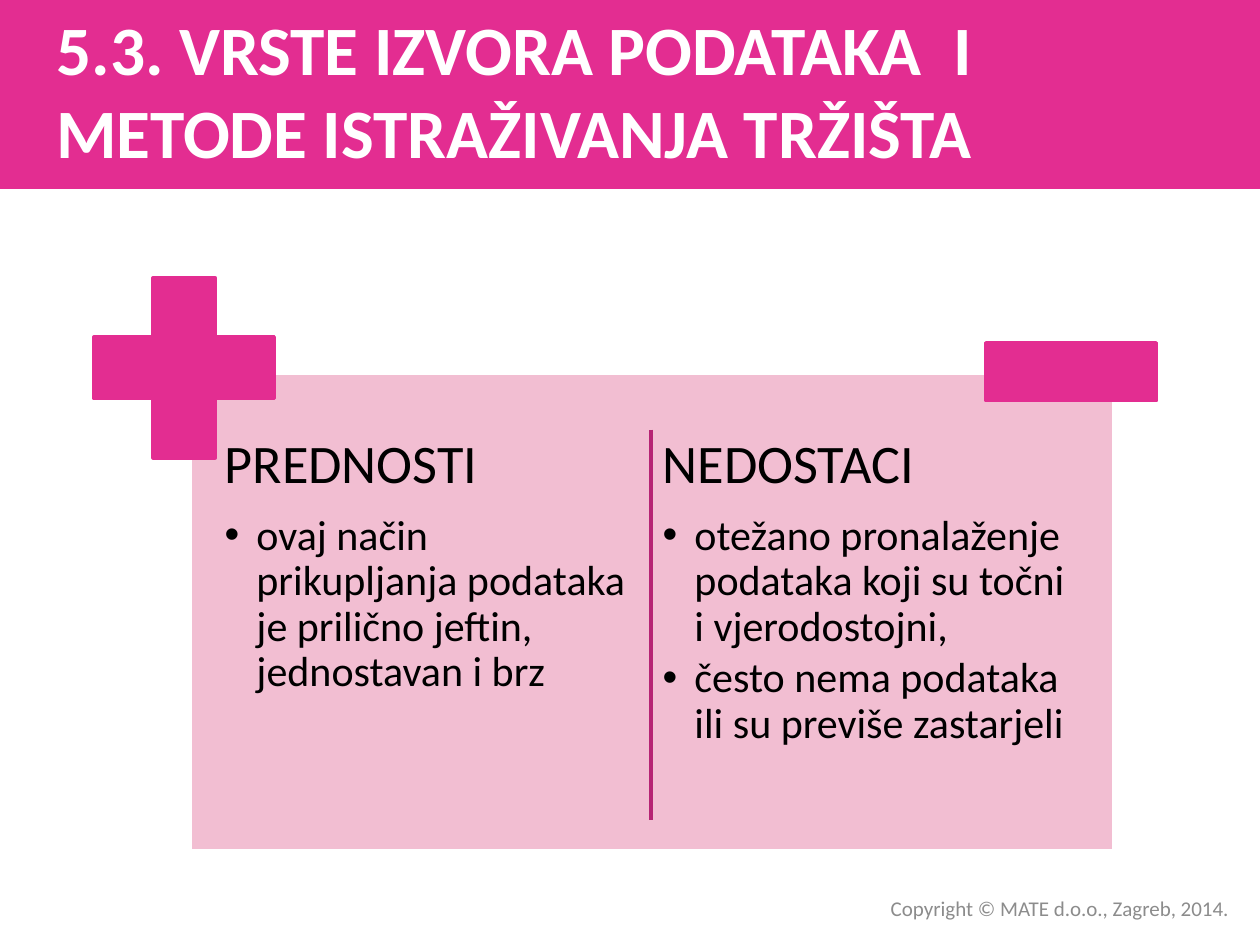
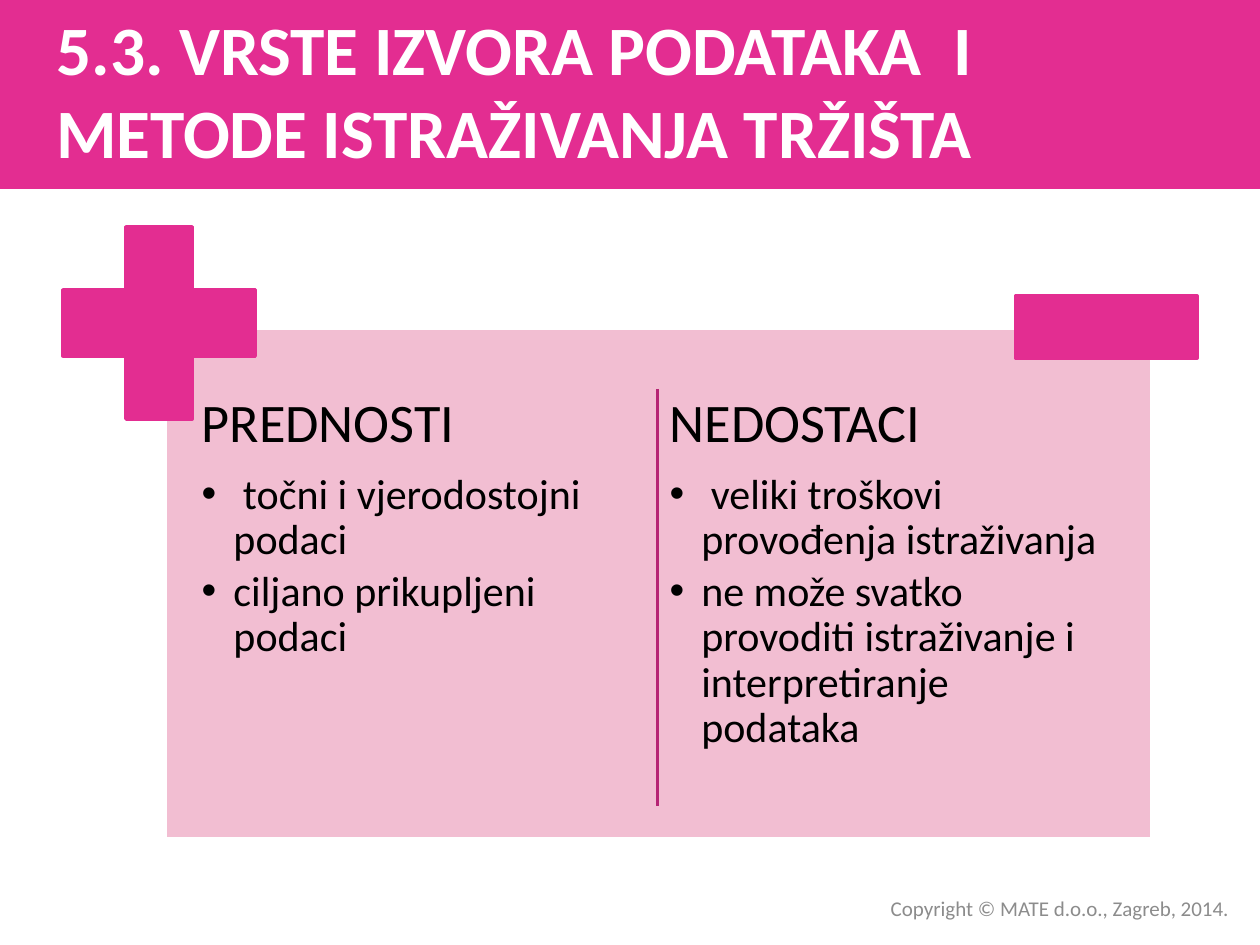
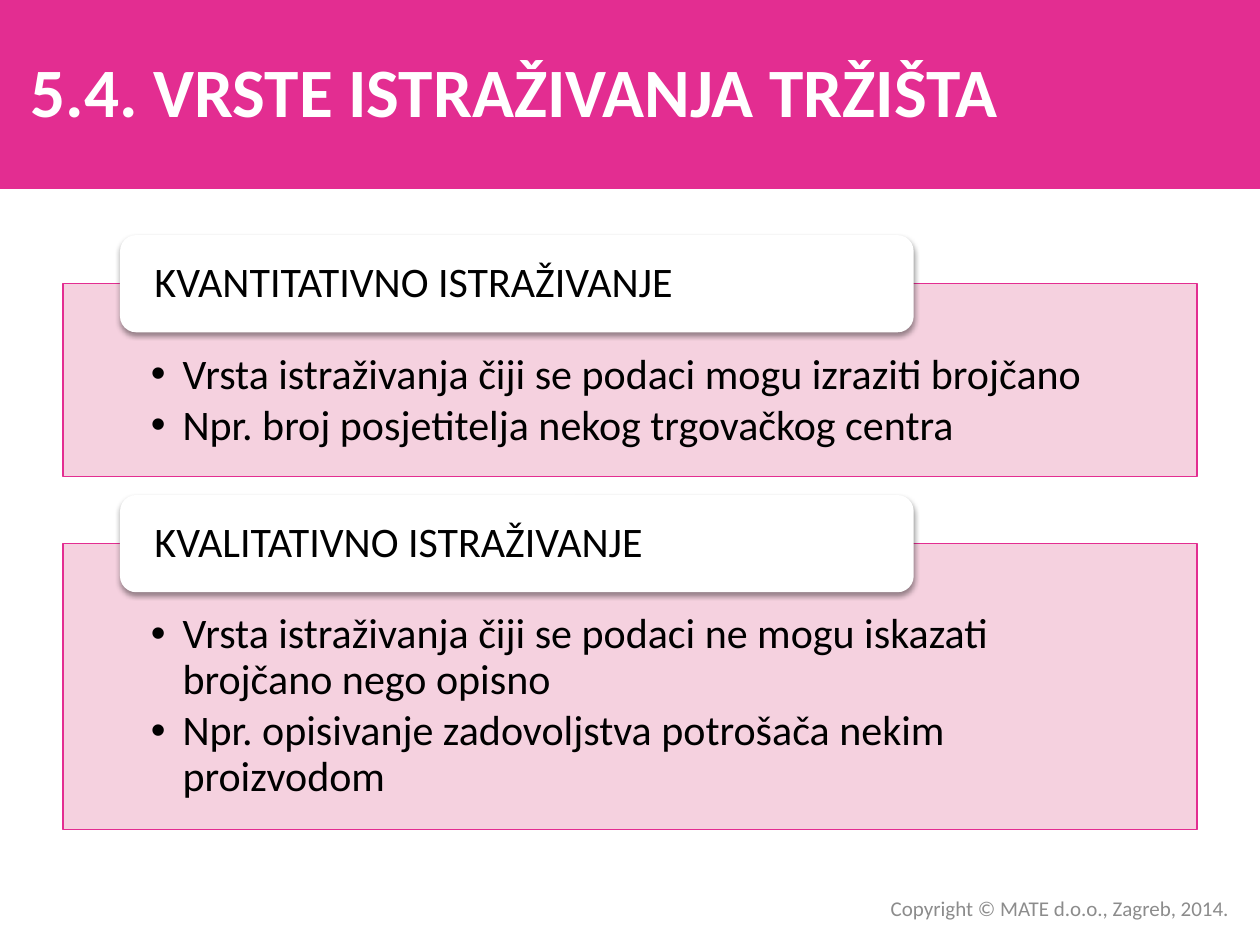
from lxml import etree
from pptx import Presentation
from pptx import util as u
from pptx.dml.color import RGBColor
from pptx.enum import shapes as kinds
from pptx.enum import text as t
from pptx.oxml.ns import qn

FONT = "Calibri"
PINK = "E32D91"
DARK_PINK = "B62474"
PALE_PINK = "F2BED2"
PANEL_PINK = "F4CDDC"
WHITE = "FFFFFF"
BLACK = "000000"
GREY = "8C8C8C"
BULLET_INDENT = u.Cm(0.64)

SOURCES_TITLE = "5.3. VRSTE IZVORA PODATAKA  I METODE ISTRAŽIVANJA TRŽIŠTA"
TYPES_TITLE = "5.4. VRSTE ISTRAŽIVANJA TRŽIŠTA"
COPYRIGHT = "Copyright © MATE d.o.o., Zagreb, 2014."


def color(value):
    return RGBColor.from_string(value)


def cm(*lengths):
    return [u.Cm(length) for length in lengths]


def child(parent, tag, **attributes):
    return etree.SubElement(parent, qn(tag), **attributes)


def place(shape, box):
    shape.left, shape.top, shape.width, shape.height = cm(*box)


def paint(shape, fill, line=None, line_width=2):
    shape.fill.solid()
    shape.fill.fore_color.rgb = color(fill)
    if line:
        shape.line.color.rgb = color(line)
        shape.line.width = u.Pt(line_width)
    else:
        shape.line.fill.background()


def add_box(slide, kind, box, fill, line=None):
    shape = slide.shapes.add_shape(kind, *cm(*box))
    shape.shadow.inherit = False
    paint(shape, fill, line)
    return shape


def set_frame(shape, margins, anchor):
    """Margins are left, top, right and bottom in centimetres."""
    frame = shape.text_frame
    frame.word_wrap = True
    frame.auto_size = t.MSO_AUTO_SIZE.NONE
    frame.vertical_anchor = anchor
    (frame.margin_left, frame.margin_top,
     frame.margin_right, frame.margin_bottom) = cm(*margins)
    return frame


def add_run(paragraph, content, size, ink=BLACK, bold=False):
    run = paragraph.add_run()
    run.text = content
    run.font.name = FONT
    run.font.size = u.Pt(size)
    run.font.bold = bold
    run.font.color.rgb = color(ink)


def set_bullet(paragraph, shown):
    properties = paragraph._p.get_or_add_pPr()
    indent = BULLET_INDENT if shown else 0
    properties.set("marL", str(indent))
    properties.set("indent", str(-indent))
    if shown:
        child(properties, "a:buFont", typeface="Arial")
        child(properties, "a:buChar", char="•")
    else:
        child(properties, "a:buNone")


def fill_list(slide, index, box, margins, items, heading=None):
    """Fill a body placeholder and bring it in front of the earlier shapes."""
    body = slide.placeholders[index]
    slide.shapes.element.append(body.element)
    place(body, box)
    frame = set_frame(body, margins, t.MSO_ANCHOR.TOP)
    rows = [(heading, 31, 0.35, False)] if heading else []
    rows += [(item, 24, 0.15, True) for item in items]
    for number, (content, size, gap, bulleted) in enumerate(rows):
        paragraph = frame.add_paragraph() if number else frame.paragraphs[0]
        set_bullet(paragraph, bulleted)
        paragraph.line_spacing = 0.9
        paragraph.space_before = u.Pt(0)
        paragraph.space_after = u.Pt(round(size * gap, 1))
        add_run(paragraph, content, size)
    return body


def add_slide(presentation, title):
    """Add a slide with its band, title and copyright line."""
    slide = presentation.slides.add_slide(presentation.slide_layouts[3])
    add_box(slide, kinds.MSO_SHAPE.RECTANGLE, (0, 0, 25.4, 3.81), PINK)

    heading = slide.shapes.title
    slide.shapes.element.append(heading.element)
    place(heading, (0, 0.21, 20.74, 3.18))
    frame = set_frame(heading, (0.25, 0.13, 0.25, 0.13), t.MSO_ANCHOR.MIDDLE)
    frame.paragraphs[0].alignment = t.PP_ALIGN.CENTER
    add_run(frame.paragraphs[0], title, 39.6, WHITE, bold=True)

    footer = slide.shapes.add_textbox(*cm(11.9, 17.93, 13.13, 0.76))
    frame = set_frame(footer, (0.25, 0.13, 0.25, 0.13), t.MSO_ANCHOR.MIDDLE)
    frame.paragraphs[0].alignment = t.PP_ALIGN.RIGHT
    add_run(frame.paragraphs[0], COPYRIGHT, 12, GREY)
    return slide


def add_divider(slide, x, top, bottom):
    divider = slide.shapes.add_connector(
        kinds.MSO_CONNECTOR.STRAIGHT, *cm(x, top, x, bottom))
    divider.line.color.rgb = color(DARK_PINK)
    divider.line.width = u.Pt(2)
    child(divider.element.spPr, "a:effectLst")


def add_pros_and_cons(slide, left, top, scale, pros, cons):
    """Offsets are measured from the panel corner and grow with scale."""
    def scaled(x, y, width, height):
        return (left + x * scale, top + y * scale, width * scale, height * scale)

    rectangle = kinds.MSO_SHAPE.RECTANGLE
    add_box(slide, rectangle, scaled(0, 0, 18.62, 9.63), PALE_PINK, WHITE)
    columns = [("PREDNOSTI", pros), ("NEDOSTACI", cons)]
    for number, (heading, items) in enumerate(columns):
        box = scaled(0.55 + 8.83 * number, 1.13, 8.6, 8.23)
        fill_list(slide, number + 1, box, [0.15] * 4, items, heading)
    plus = add_box(slide, kinds.MSO_SHAPE.CROSS, scaled(-1.93, -1.92, 3.63, 3.63), PINK, PINK)
    plus.adjustments[0] = 0.328
    add_box(slide, rectangle, scaled(16.05, -0.61, 3.43, 1.17), PINK, PINK)
    add_divider(slide, left + 9.29 * scale, top + 1.14 * scale, top + 9.01 * scale)


def add_soft_shadow(shape):
    effects = shape.element.spPr.find(qn("a:effectLst"))
    shadow = child(effects, "a:outerShdw", blurRad=str(u.Pt(3.1)), dist=str(u.Pt(1.6)),
                   dir="5400000", rotWithShape="0")
    ink = child(shadow, "a:srgbClr", val=BLACK)
    child(ink, "a:alpha", val="38000")


def add_research_type(slide, index, top, height, heading, items):
    panel = fill_list(slide, index, (1.27, top, 22.86, height),
                      (1.77, 1.39, 1.77, 0.48), items)
    paint(panel, PANEL_PINK, PINK, 0.75)
    child(panel.element.spPr.find(".//" + qn("a:srgbClr")), "a:alpha", val="90000")

    label = add_box(slide, kinds.MSO_SHAPE.ROUNDED_RECTANGLE,
                    (2.42, top - 0.98, 16, 1.96), WHITE)
    add_soft_shadow(label)
    frame = set_frame(label, (0.6, 0, 0.6, 0), t.MSO_ANCHOR.MIDDLE)
    paragraph = frame.paragraphs[0]
    paragraph.alignment = t.PP_ALIGN.LEFT
    paragraph.line_spacing = 0.9
    add_run(paragraph, heading, 24)


def main():
    presentation = Presentation()
    presentation.slide_width, presentation.slide_height = cm(25.4, 19.05)

    secondary = add_slide(presentation, SOURCES_TITLE)
    add_pros_and_cons(
        secondary, 3.83, 7.52, 1,
        ["ovaj način prikupljanja podataka je prilično jeftin, jednostavan i brz"],
        ["otežano pronalaženje podataka koji su točni i vjerodostojni,",
         "često nema podataka ili su previše zastarjeli"])

    primary = add_slide(presentation, SOURCES_TITLE)
    add_pros_and_cons(
        primary, 3.33, 6.62, 1.068,
        [" točni i vjerodostojni podaci", "ciljano prikupljeni podaci"],
        [" veliki troškovi provođenja istraživanja",
         "ne može svatko provoditi istraživanje i interpretiranje podataka"])

    research_types = add_slide(presentation, TYPES_TITLE)
    add_research_type(
        research_types, 1, 5.72, 3.89, "KVANTITATIVNO ISTRAŽIVANJE",
        ["Vrsta istraživanja čiji se podaci mogu izraziti brojčano",
         "Npr. broj posjetitelja nekog trgovačkog centra"])
    add_research_type(
        research_types, 2, 10.96, 5.76, "KVALITATIVNO ISTRAŽIVANJE",
        ["Vrsta istraživanja čiji se podaci ne mogu iskazati brojčano nego opisno",
         "Npr. opisivanje zadovoljstva potrošača nekim proizvodom"])

    presentation.save("out.pptx")


if __name__ == "__main__":
    main()
